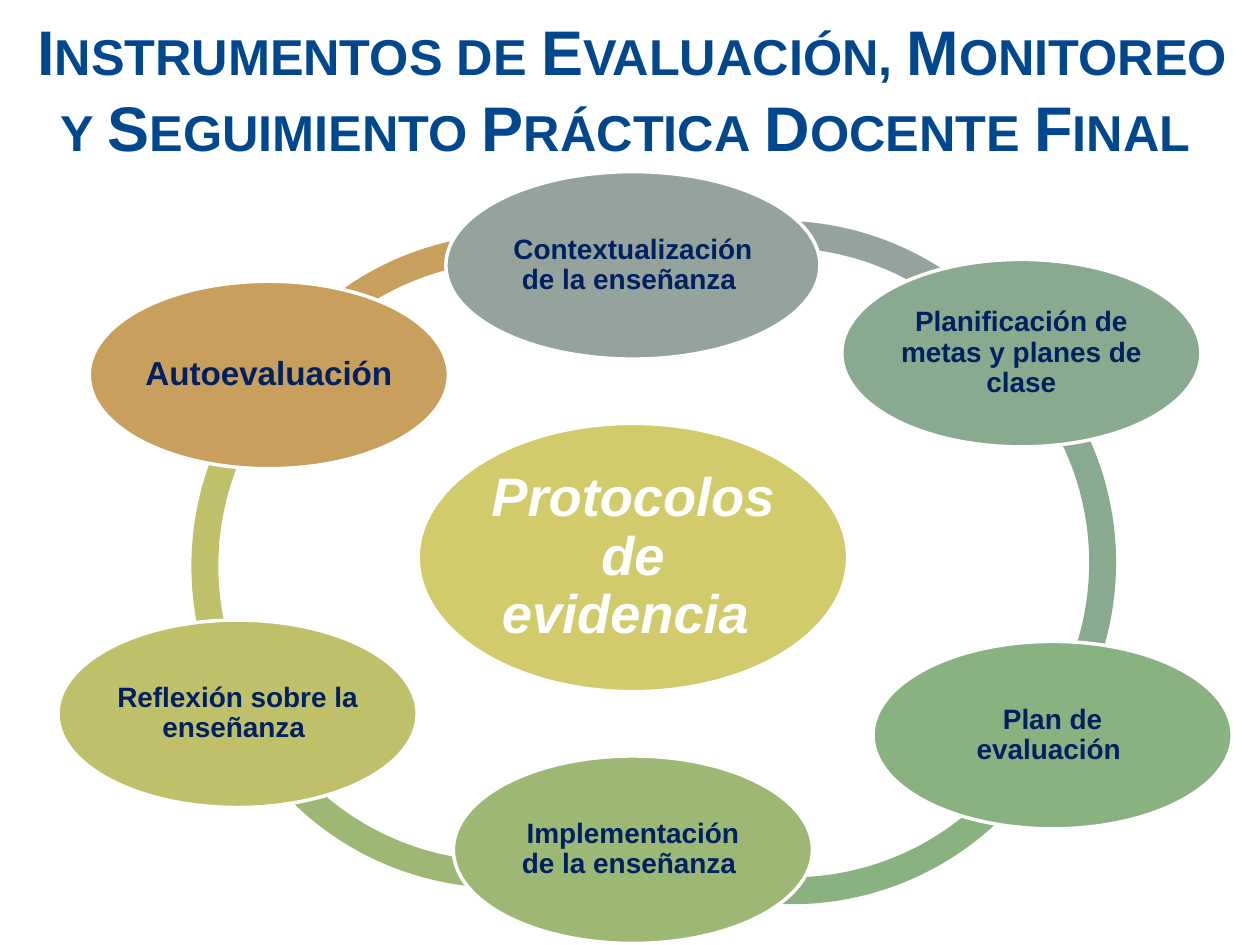
from pptx import Presentation
from pptx.dml.color import RGBColor
from pptx.enum.shapes import MSO_SHAPE
from pptx.enum.text import MSO_ANCHOR, MSO_AUTO_SIZE, PP_ALIGN
from pptx.util import Cm, Pt

TITLE_BLUE = RGBColor(0x00, 0x47, 0x8E)
NAVY = RGBColor(0x00, 0x20, 0x60)
WHITE = RGBColor(0xFF, 0xFF, 0xFF)
YELLOW = RGBColor(0xD2, 0xCB, 0x6C)
GREY = RGBColor(0x95, 0xA3, 0x9D)
SAGE = RGBColor(0x8A, 0xAA, 0x90)
GREEN = RGBColor(0x8A, 0xB1, 0x80)
LIME = RGBColor(0x9D, 0xB8, 0x74)
OLIVE = RGBColor(0xBF, 0xC0, 0x69)
ORANGE = RGBColor(0xC8, 0x9F, 0x5D)

TITLE = "Instrumentos de Evaluación, Monitoreo y Seguimiento Práctica Docente Final "

# Colour, left and top in cm, start and end angle in degrees
ARCS = [
    (ORANGE, 4.37, 4.72, 212.77, 293.84),
    (OLIVE, 3.86, 5.38, 149.76, 220.95),
    (LIME, 4.09, 5.84, 63.33, 154.79),
    (GREEN, 9.93, 6.17, 26.51, 122.7),
    (SAGE, 10.44, 5.31, 314.38, 36.09),
    (GREY, 9.68, 4.45, 239.94, 325.64),
]
ARC_SIZE = 12.06
ARC_THICKNESS = 0.045

# Text, fill, centre x and y in cm, width in cm, font size
STEPS = [
    ("Contextualización de la enseñanza ", GREY, 12.76, 5.35, 7.54, 16),
    ("Planificación de metas y planes de clase", SAGE, 20.59, 7.12, 7.24, 16),
    ("Plan de evaluación ", GREEN, 21.22, 14.82, 7.24, 16),
    ("Implementación de la enseñanza ", LIME, 12.76, 17.13, 7.24, 16),
    ("Reflexión sobre la enseñanza ", OLIVE, 4.79, 14.39, 7.24, 16),
    ("Autoevaluación", ORANGE, 5.42, 7.56, 7.24, 19),
]
STEP_HEIGHT = 3.78


def set_attributes(target, **values):
    for name, value in values.items():
        setattr(target, name, value)


def write(tf, text, color, size, italic=False):
    p = tf.paragraphs[0]
    p.alignment = PP_ALIGN.CENTER
    r = p.add_run()
    r.text = text
    set_attributes(r.font, name="Arial", size=Pt(size), bold=True, italic=italic)
    r.font.color.rgb = color
    return p, r


def add_filled(shapes, kind, left, top, width, height, fill):
    sp = shapes.add_shape(kind, Cm(left), Cm(top), Cm(width), Cm(height))
    sp.shadow.inherit = False
    sp.fill.solid()
    sp.fill.fore_color.rgb = fill
    sp.line.fill.background()
    return sp


def add_arc(shapes, fill, left, top, start, end):
    sp = add_filled(shapes, MSO_SHAPE.BLOCK_ARC, left, top, ARC_SIZE, ARC_SIZE, fill)
    # Angles are stored in 1/60000 degree, adjustments in 1/100000
    for i, value in enumerate((start * 0.6, end * 0.6, ARC_THICKNESS)):
        sp.adjustments[i] = value


def add_ellipse(shapes, text, fill, x, y, width, size,
                height=STEP_HEIGHT, color=NAVY, italic=False, inset=0.06):
    sp = add_filled(shapes, MSO_SHAPE.OVAL, x - width / 2, y - height / 2,
                    width, height, fill)
    sp.line.color.rgb = WHITE
    sp.line.width = Pt(2)
    tf = sp.text_frame
    set_attributes(tf, word_wrap=True, vertical_anchor=MSO_ANCHOR.MIDDLE,
                   margin_left=Cm(inset), margin_right=Cm(inset),
                   margin_top=Cm(inset), margin_bottom=Cm(inset))
    p, _ = write(tf, text, color, size, italic)
    p.line_spacing = 0.9


def main():
    prs = Presentation()
    set_attributes(prs, slide_width=Cm(25.4), slide_height=Cm(19.05))
    s = prs.slides.add_slide(prs.slide_layouts[5])

    title = s.shapes.title
    set_attributes(title, left=Cm(0.3), top=Cm(0.13), width=Cm(24.89), height=Cm(3.33))
    set_attributes(title.text_frame, word_wrap=True, vertical_anchor=MSO_ANCHOR.TOP,
                   auto_size=MSO_AUTO_SIZE.SHAPE_TO_FIT_TEXT)
    _, r = write(title.text_frame, TITLE, TITLE_BLUE, 36)
    r.font._element.set("cap", "small")

    for arc in ARCS:
        add_arc(s.shapes, *arc)
    add_ellipse(s.shapes, "Protocolos de evidencia ", YELLOW, 12.76, 11.24, 8.66, 31,
                height=5.41, color=WHITE, italic=True, inset=0.1)
    for step in STEPS:
        add_ellipse(s.shapes, *step)

    prs.save("out.pptx")


if __name__ == "__main__":
    main()
